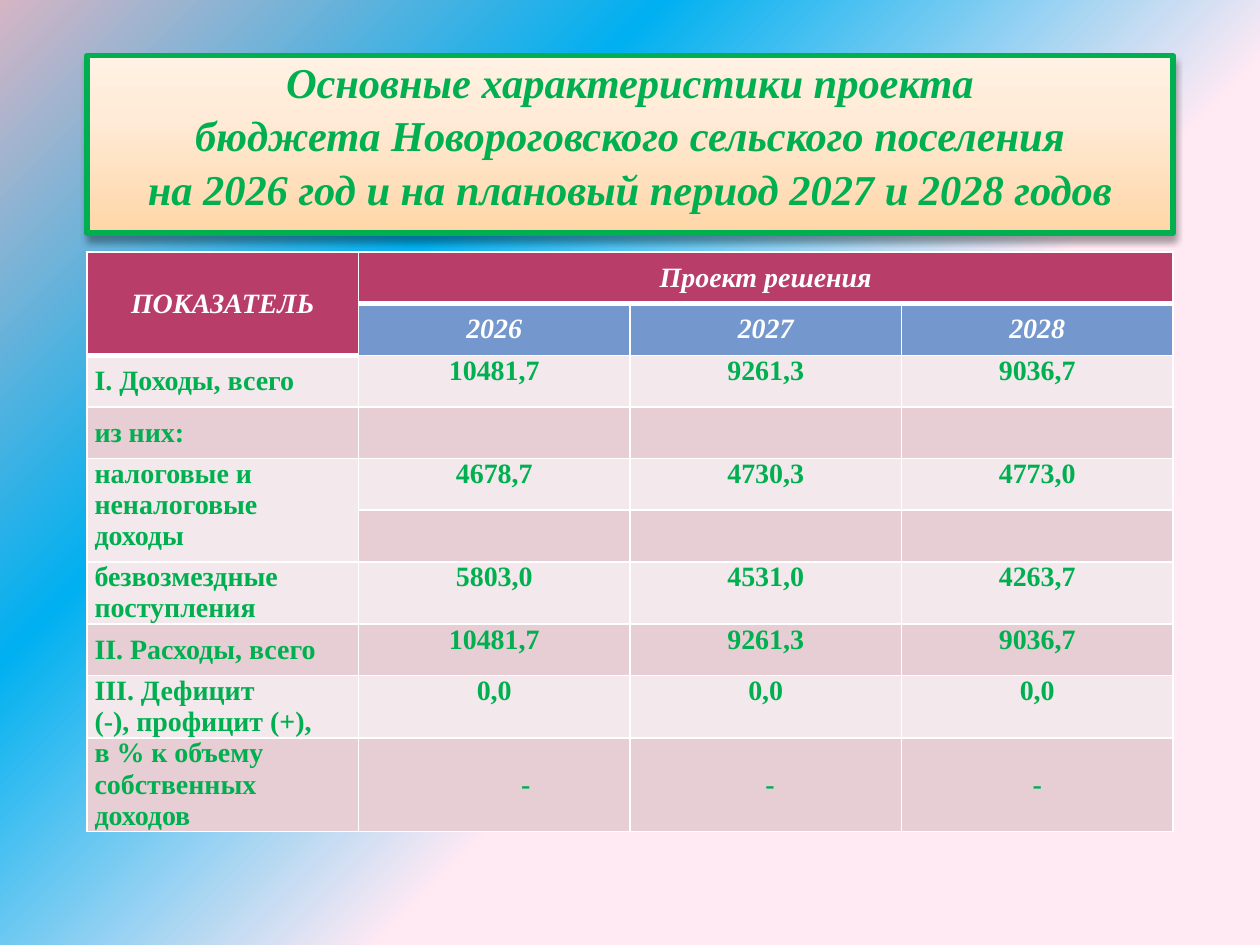
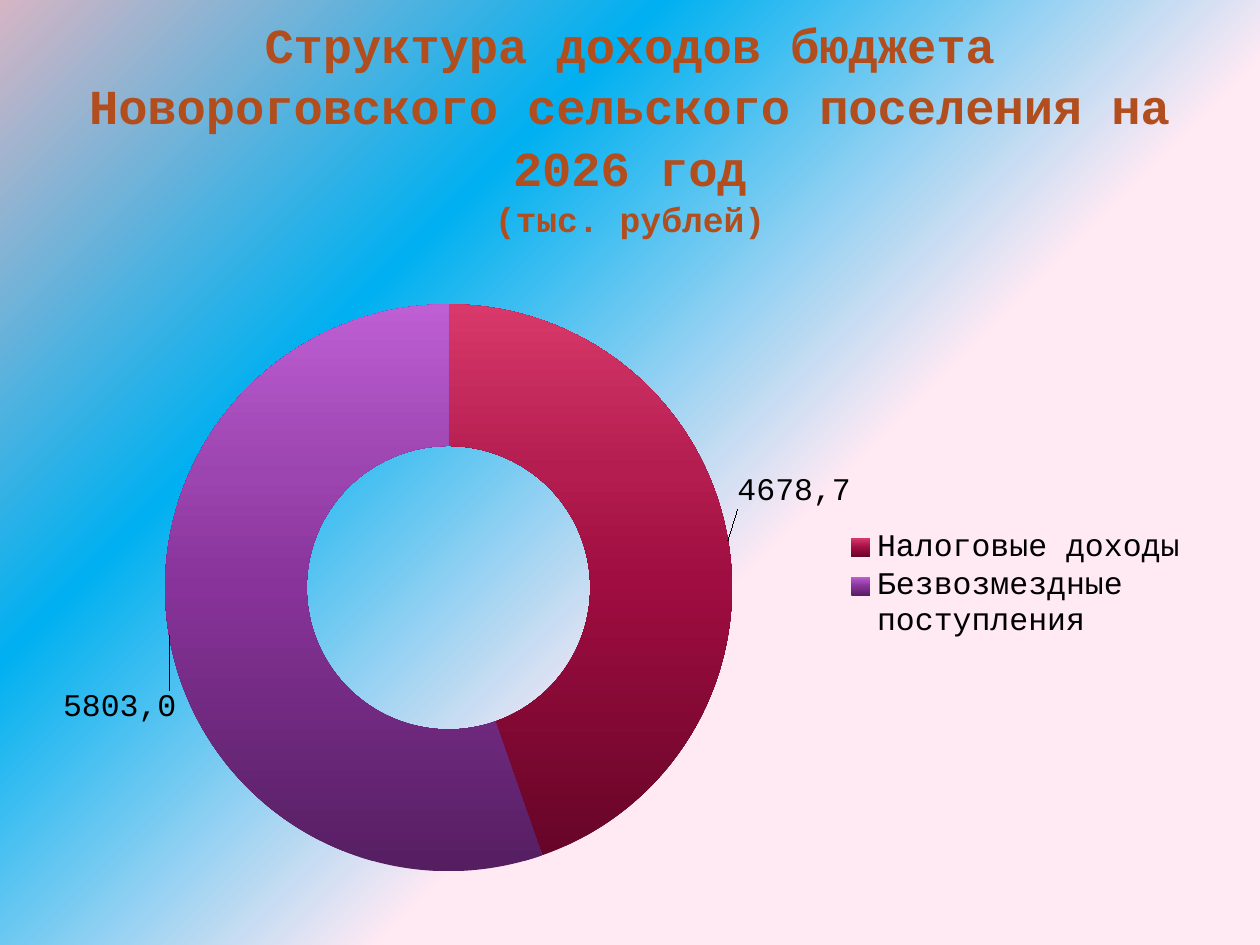
from lxml.etree import SubElement
from pptx import Presentation
from pptx.chart.data import CategoryChartData
from pptx.dml.color import RGBColor
from pptx.enum.chart import XL_CHART_TYPE, XL_LEGEND_POSITION
from pptx.enum.shapes import MSO_SHAPE
from pptx.enum.text import MSO_ANCHOR, PP_ALIGN
from pptx.oxml import parse_xml
from pptx.oxml.ns import nsdecls, qn
from pptx.util import Inches, Pt

COLORS = {
    "green": "00B050", "brown": "B24D1D", "white": "FFFFFF", "black": "000000",
    "header": "B83D68", "years": "7498CE", "light": "F3E8EB", "dark": "E6CED4",
}
BACKGROUND = [(40, "FFE9F3"), (70, "00B0F0"), (100, "D5B5C4")]
PEACH = [(0, "FFD6A7"), (65, "FFEBD7"), (100, "FFF1E3")]
RASPBERRY = [(0, "660527"), (50, "A00D40"), (70, "B41D50"), (100, "D8396A")]
VIOLET = [(0, "551E61"), (50, "873399"), (70, "9C44AF"), (100, "BE5FD4")]
SERIF, MONO = "Times New Roman", "Courier New"

COLUMNS, ROWS = 100, 75
UNIT = Inches(0.1)

HEADER_ROWS = [
    ["ПОКАЗАТЕЛЬ", "Проект решения", "", ""],
    ["", "2026", "2027", "2028"],
]
BUDGET_ROWS = [
    ["I. Доходы, всего", "10481,7", "9261,3", "9036,7"],
    ["из них:", "", "", ""],
    ["налоговые и неналоговые доходы", "4678,7", "4730,3", "4773,0"],
    ["", "", "", ""],
    ["безвозмездные поступления", "5803,0", "4531,0", "4263,7"],
    ["II. Расходы, всего", "10481,7", "9261,3", "9036,7"],
    ["III. Дефицит\n(-), профицит (+),", "0,0", "0,0", "0,0"],
    ["в % к объему собственных доходов", "-", "-", "-"],
]
CENTERED_LABELS = {"I. Доходы, всего", "из них:", "II. Расходы, всего"}
DASH_INDENTS = {1: 0.5, 2: 0.07}

# category, value, label, gradient, label shift in shares of the chart
INCOME = [
    ("Налоговые доходы", 4678.7, "4678,7", RASPBERRY, (0.12, -0.1)),
    ("Безвозмездные поступления", 5803, "5803,0", VIOLET, (-0.11, 0.14)),
]


def grid(*cells):
    """Turn grid columns and rows into lengths."""
    return [int(n * UNIT) for n in cells]


def rgb(name):
    return RGBColor.from_string(COLORS[name])


def set_gradient(fill, stops, direction):
    """Put a gradient, running as the direction element says, into a fill."""
    fill.solid()
    solid = fill._xPr.find(qn("a:solidFill"))
    marks = "".join(f'<a:gs pos="{pos * 1000}"><a:srgbClr val="{color}"/></a:gs>'
                    for pos, color in stops)
    solid.getparent().replace(solid, parse_xml(
        f'<a:gradFill {nsdecls("a")} rotWithShape="1"><a:gsLst>{marks}</a:gsLst>'
        f'{direction}</a:gradFill>'))


def set_upward_gradient(fill, stops):
    set_gradient(fill, stops, '<a:lin ang="16200000" scaled="0"/>')


def set_font(font, name, size, color, bold=False, italic=False):
    font.name, font.size, font.bold, font.italic = name, Pt(size), bold, italic
    font.color.rgb = rgb(color)


def add_slide(prs):
    s = prs.slides.add_slide(prs.slide_layouts[6])
    set_gradient(s.background.fill, BACKGROUND,
                 '<a:path path="circle"><a:fillToRect l="100000" t="100000"/></a:path>')
    return s


def write_title(sp, lines, name, color, italic, top=0, bottom=0):
    """Write (text, size) lines centred in a shape."""
    tf = sp.text_frame
    tf.word_wrap = True
    tf.vertical_anchor = MSO_ANCHOR.MIDDLE
    tf.margin_top, tf.margin_bottom = Inches(top), Inches(bottom)
    tf.text = "\n".join(text for text, _ in lines)
    for p, (_, size) in zip(tf.paragraphs, lines):
        p.alignment, p.line_spacing = PP_ALIGN.CENTER, 1.05
        set_font(p.font, name, size, color, True, italic)


def add_framed_title(s, box, lines):
    sp = s.shapes.add_shape(MSO_SHAPE.RECTANGLE, *grid(*box))
    set_upward_gradient(sp.fill, PEACH)
    sp.line.color.rgb, sp.line.width = rgb("green"), Pt(3)
    sp.shadow.inherit = False
    effects = sp._element.spPr.find(qn("a:effectLst"))
    effects.append(parse_xml(
        f'<a:outerShdw {nsdecls("a")} blurRad="{Pt(4)}" dist="{Pt(3)}" dir="5400000" '
        'rotWithShape="0"><a:srgbClr val="000000"><a:alpha val="35000"/></a:srgbClr>'
        '</a:outerShdw>'))
    write_title(sp, lines, SERIF, "green", True, bottom=0.17)


def set_borders(cell, row, col):
    """Draw thin white borders, thick under the header."""
    last_header = 1 if col == 0 else 0
    widths = {"L": 1, "R": 1,
              "T": 3 if row == last_header + 1 else 1,
              "B": 3 if row in (0, last_header) else 1}
    tcPr = cell._tc.get_or_add_tcPr()
    for i, (side, width) in enumerate(widths.items()):
        tcPr.insert(i, parse_xml(
            f'<a:ln{side} {nsdecls("a")} w="{Pt(width)}"><a:solidFill>'
            f'<a:srgbClr val="{COLORS["white"]}"/></a:solidFill></a:ln{side}>'))


def fill_cell(cell, text, row, col):
    header = row < len(HEADER_ROWS)
    last = row == len(HEADER_ROWS + BUDGET_ROWS) - 1
    if header:
        color = "header" if row == 0 or col == 0 else "years"
    else:
        color = "dark" if row % 2 else "light"
    cell.fill.solid()
    cell.fill.fore_color.rgb = rgb(color)
    set_borders(cell, row, col)
    cell.margin_left = cell.margin_right = Inches(0.07 if header else 0.06)
    cell.margin_top = cell.margin_bottom = Inches(0.05 if header else 0)
    middle = header or text in CENTERED_LABELS or (last and col > 0)
    cell.vertical_anchor = MSO_ANCHOR.MIDDLE if middle else MSO_ANCHOR.TOP
    cell.text = text
    for p in cell.text_frame.paragraphs:
        p.alignment = PP_ALIGN.CENTER if header or col else PP_ALIGN.LEFT
        if last and col in DASH_INDENTS:
            p._p.get_or_add_pPr().set("indent", str(Inches(DASH_INDENTS[col])))
        set_font(p.font, SERIF, 16, "white" if header else "green", True, header)


def add_budget_table(s, box):
    rows = HEADER_ROWS + BUDGET_ROWS
    table = s.shapes.add_table(len(rows), len(rows[0]), *grid(*box)).table
    for r, texts in enumerate(rows):
        for c, text in enumerate(texts):
            fill_cell(table.cell(r, c), text, r, c)
    for first, end in [((0, 0), (1, 0)), ((0, 1), (0, 3)), ((4, 0), (5, 0))]:
        table.cell(*first).merge(table.cell(*end))


def make_layout(**values):
    """Build a manual chart layout from its settings."""
    layout = parse_xml(f'<c:layout {nsdecls("c")}><c:manualLayout/></c:layout>')
    for tag, value in values.items():
        SubElement(layout[0], qn(f"c:{tag}")).set("val", str(value))
    return layout


def place_part(element, after, layout):
    """Give a chart part its layout, right after the named child or first."""
    for old in element.findall(qn("c:layout")):
        element.remove(old)
    if after is None:
        element.insert(0, layout)
    else:
        element.find(qn(after)).addnext(layout)


def add_income_chart(s, box):
    data = CategoryChartData()
    data.categories = [item[0] for item in INCOME]
    data.add_series("Series 1", [item[1] for item in INCOME])
    chart = s.shapes.add_chart(XL_CHART_TYPE.DOUGHNUT, *grid(*box), data).chart
    set_font(chart.font, MONO, 18, "black")
    chart.has_title = False
    chart.has_legend = True
    legend = chart.legend
    legend.position, legend.include_in_layout = XL_LEGEND_POSITION.RIGHT, False
    set_font(legend.font, MONO, 18, "black")
    place_part(legend._element, "c:legendPos", make_layout(
        xMode="edge", yMode="edge", x=0.69, y=0.4, w=0.3, h=0.19))

    plot = chart.plots[0]
    plot.vary_by_categories = True
    plot._element.find(qn("c:holeSize")).set("val", "50")
    place_part(plot._element.getparent(), None, make_layout(
        layoutTarget="inner", xMode="edge", yMode="edge", x=0.09, y=0.03, w=0.5, h=0.94))

    series = plot.series[0]
    labels = series.data_labels
    labels.show_value = True
    set_font(labels.font, MONO, 18, "black")
    for i, (_, _, label, stops, (dx, dy)) in enumerate(INCOME):
        point = series.points[i]
        set_upward_gradient(point.format.fill, stops)
        tf = point.data_label.text_frame
        tf.text = label
        set_font(tf.paragraphs[0].font, MONO, 18, "black")
        dLbl = labels._element.findall(qn("c:dLbl"))[i]
        place_part(dLbl, "c:idx", make_layout(x=dx, y=dy))
        for position in dLbl.findall(qn("c:dLblPos")):
            dLbl.remove(position)
    leader = labels._element.find(qn("c:showLeaderLines"))
    if leader is None:
        leader = SubElement(labels._element, qn("c:showLeaderLines"))
    leader.set("val", "1")


def build_budget_slide(prs):
    s = add_slide(prs)
    add_framed_title(s, (6.9, 4.4, 86.2, 14.1), [
        ("Основные характеристики проекта", 24.3),
        ("бюджета Новороговского сельского поселения", 24.3),
        ("на 2026 год и на плановый период 2027 и 2028 годов", 24.3)])
    add_budget_table(s, (6.9, 20, 86.2, 41))


def build_income_slide(prs):
    s = add_slide(prs)
    add_income_chart(s, (5, 22.7, 90, 47.9))
    sp = s.shapes.add_textbox(*grid(5, 3, 90, 12.5))
    write_title(sp, [
        ("Структура доходов бюджета Новороговского сельского поселения на 2026 год", 27.9),
        ("(тыс. рублей)", 19.8)], MONO, "brown", False, top=0.14)


def main():
    prs = Presentation()
    prs.slide_width, prs.slide_height = grid(COLUMNS, ROWS)
    build_budget_slide(prs)
    build_income_slide(prs)
    prs.save("out.pptx")


if __name__ == "__main__":
    main()
